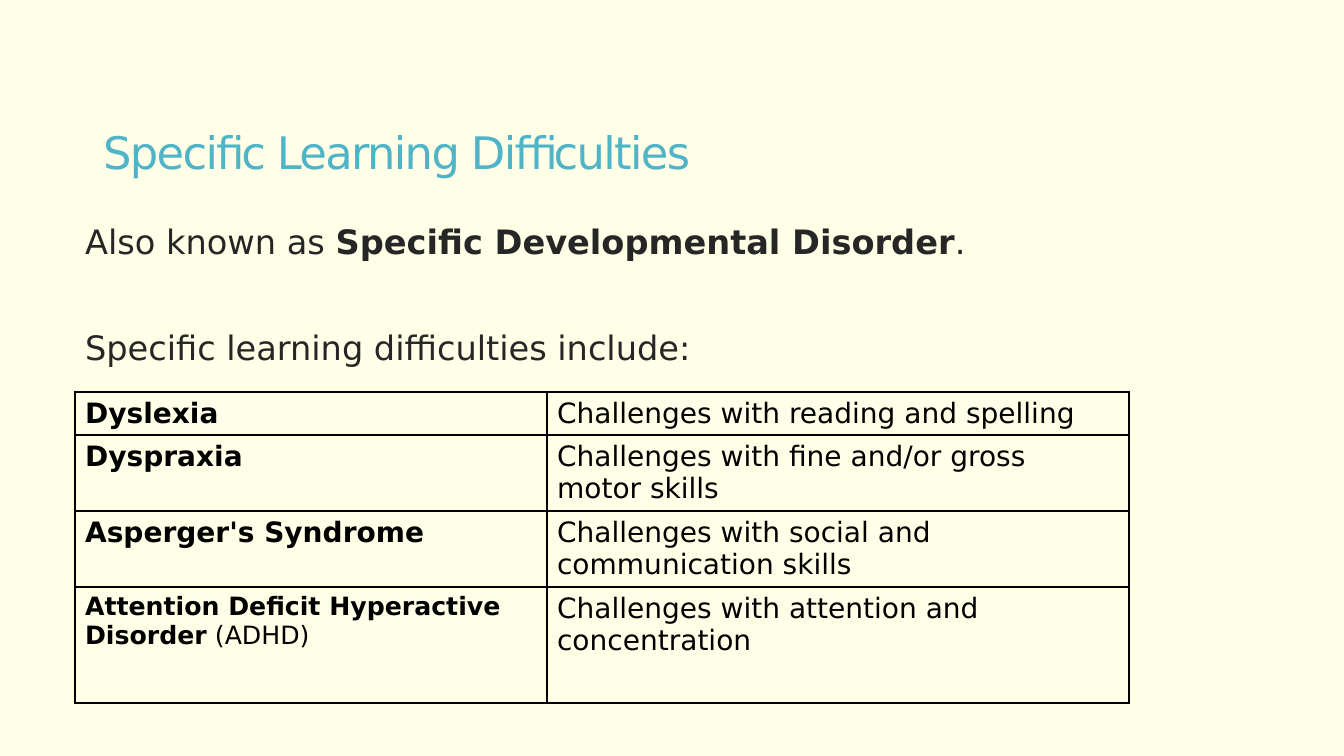
"""Build the slide on specific learning difficulties."""
from lxml import etree
from pptx import Presentation
from pptx import util as u
from pptx.dml.color import RGBColor
from pptx.enum import text
from pptx.oxml import ns

HEADING = "Specific Learning Difficulties"
INTRO = [
    (0, [("Also known as ", False), ("Specific Developmental Disorder", True), (".", False)]),
    (51, [("Specific learning difficulties include:", False)]),
]
DIFFICULTIES = [
    (43, 20, [("Dyslexia", True)], "Challenges with reading and spelling"),
    (76, 20, [("Dyspraxia", True)], "Challenges with fine and/or gross motor skills"),
    (76, 20, [("Asperger's Syndrome", True)], "Challenges with social and communication skills"),
    (116, 18, [("Attention Deficit Hyperactive Disorder", True), (" (ADHD)", False)],
     "Challenges with attention and concentration"),
]
COLUMN_WIDTHS = (472, 582)
COLORS = {"background": "FFFFE7", "heading": "50B4C8", "intro": "262626", "table": "000000"}
FONT = "DejaVu Sans"
EMU_PER_PX = 914400 / 100.8


def px(length):
    return u.Emu(round(length * EMU_PER_PX))


def place(part, left, top, width, height):
    part.left, part.top, part.width, part.height = map(px, (left, top, width, height))


def write(paragraph, runs, size, color):
    paragraph.font.name = FONT
    paragraph.font.size = u.Pt(size)
    paragraph.font.color.rgb = RGBColor.from_string(COLORS[color])
    for words, bold in runs:
        run = paragraph.add_run()
        run.text = words
        run.font.bold = bold


def outline(cell):
    properties = cell._tc.get_or_add_tcPr()
    for position, side in enumerate(("lnL", "lnR", "lnT", "lnB")):
        line = etree.Element(ns.qn(f"a:{side}"), w=str(u.Pt(1)))
        fill = etree.SubElement(line, ns.qn("a:solidFill"))
        etree.SubElement(fill, ns.qn("a:srgbClr"), val=COLORS["table"])
        properties.insert(position, line)


def add_heading(slide):
    heading = slide.shapes.title
    place(heading, 93, 85, 1176, 142)
    frame = heading.text_frame
    frame.auto_size = text.MSO_AUTO_SIZE.NONE
    frame.vertical_anchor = text.MSO_ANCHOR.MIDDLE
    paragraph = frame.paragraphs[0]
    paragraph.alignment = text.PP_ALIGN.LEFT
    paragraph.line_spacing = 0.85
    write(paragraph, [(HEADING, False)], 32, "heading")
    paragraph.runs[0].font._element.set("spc", "-120")


def add_intro(slide):
    intro = slide.placeholders[1]
    place(intro, 75, 222, 1185, 415)
    frame = intro.text_frame
    frame.auto_size = text.MSO_AUTO_SIZE.NONE
    for index, (gap, runs) in enumerate(INTRO):
        paragraph = frame.add_paragraph() if index else frame.paragraphs[0]
        paragraph.line_spacing = 0.85
        paragraph.space_before = u.Pt(gap)
        write(paragraph, runs, 24, "intro")
        properties = paragraph._p.get_or_add_pPr()
        properties.set("marL", "0")
        properties.set("indent", "0")
        bullet = etree.Element(ns.qn("a:buNone"))
        properties.find(ns.qn("a:defRPr")).addprevious(bullet)


def add_difficulties(slide):
    height = sum(row[0] for row in DIFFICULTIES)
    table = slide.shapes.add_table(
        len(DIFFICULTIES), len(COLUMN_WIDTHS),
        px(75), px(392), px(sum(COLUMN_WIDTHS)), px(height)).table
    table.first_row = table.horz_banding = False
    for column, width in zip(table.columns, COLUMN_WIDTHS):
        column.width = px(width)
    for row, (height, size, name, challenge) in zip(table.rows, DIFFICULTIES):
        row.height = px(height)
        contents = ((name, size), ([(challenge, False)], 20))
        for cell, (runs, points) in zip(row.cells, contents):
            cell.fill.background()
            outline(cell)
            write(cell.text_frame.paragraphs[0], runs, points, "table")


def main():
    deck = Presentation()
    deck.slide_width, deck.slide_height = px(1344), px(756)
    slide = deck.slides.add_slide(deck.slide_layouts[1])
    slide.background.fill.solid()
    slide.background.fill.fore_color.rgb = RGBColor.from_string(COLORS["background"])
    add_heading(slide)
    add_intro(slide)
    add_difficulties(slide)
    deck.save("out.pptx")


if __name__ == "__main__":
    main()
